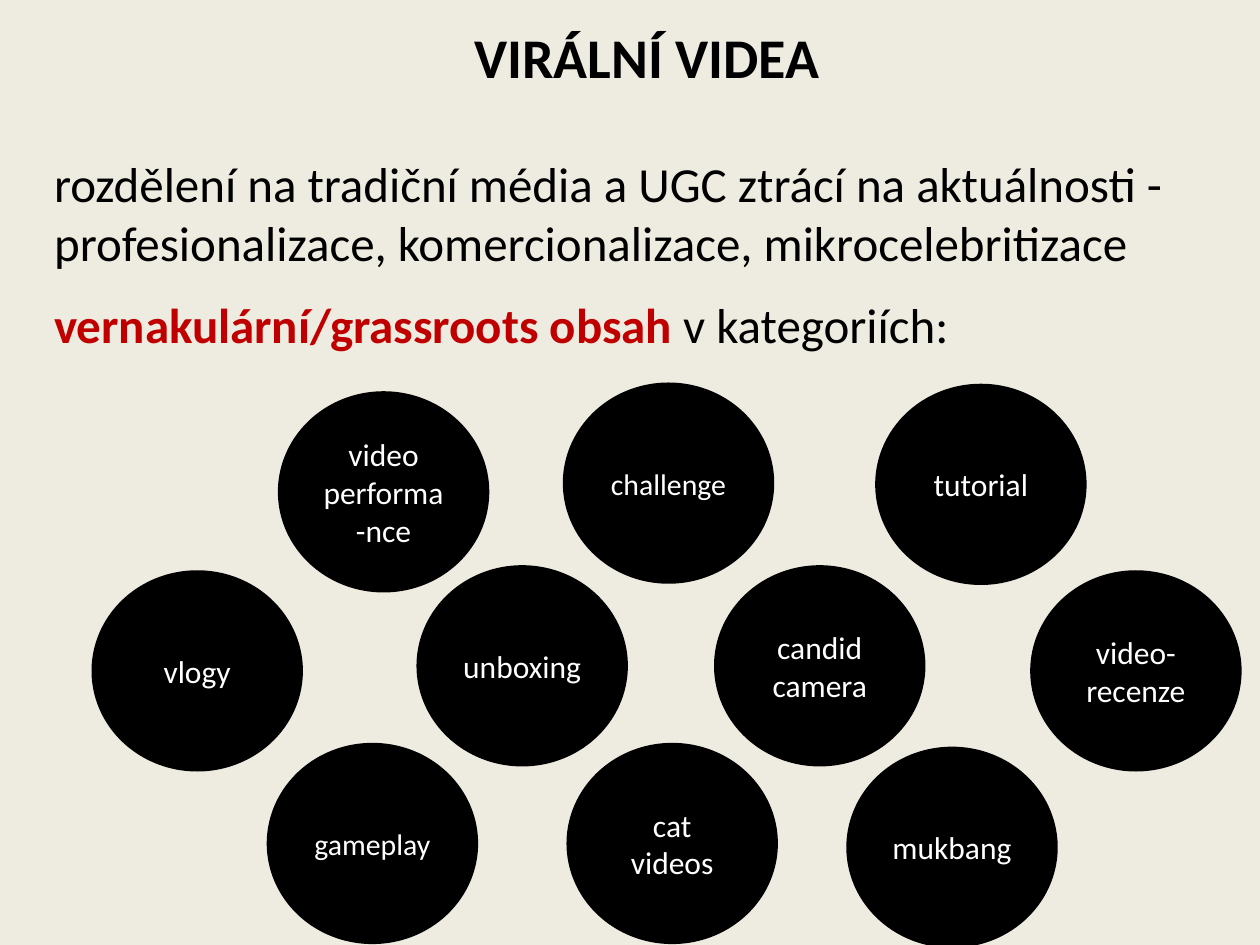
from pptx import Presentation
from pptx.dml.color import RGBColor
from pptx.enum.shapes import MSO_SHAPE as Shape
from pptx.enum.text import MSO_ANCHOR as Anchor, PP_ALIGN as Align
from pptx.util import Pt

FONT = "Calibri"
BLACK, WHITE, RED, CREAM = "000000", "FFFFFF", "C00000", "EEECE1"

# (alignment, size, space before, [(text, colour, bold), ...])
PARAGRAPHS = [
    (Align.CENTER, 32, 0, [("VIRÁLNÍ VIDEA", BLACK, True)]),
    (Align.LEFT, 28, 36.6, [
        ("rozdělení na tradiční média a UGC ztrácí na aktuálnosti - "
         "profesionalizace, komercionalizace, mikrocelebritizace", BLACK, False)]),
    (Align.LEFT, 28, 12.8, [
        ("vernakulární/grassroots obsah ", RED, True),
        ("v kategoriích:", BLACK, False)]),
]

CIRCLE_WIDTH, CIRCLE_HEIGHT = 118.8, 113
# (text, left, top, size), scattered by hand, from back to front
CATEGORIES = [
    ("vlogy", 53.3, 326.9, 18),
    ("cat videos", 324.7, 425.5, 18),
    ("video-recenze", 589.7, 326.9, 18),
    ("video performa-nce", 159.8, 224.6, 18),
    ("unboxing", 239, 324, 18),
    ("gameplay", 153.4, 425.5, 17),
    ("challenge", 322.6, 219.6, 17),
    ("tutorial", 501.1, 220.3, 18),
    ("mukbang", 484.6, 427.7, 18),
    ("candid\ncamera", 409, 324, 18),
]


def rgb(value):
    return RGBColor.from_string(value)


def style(font, size, color, bold=False):
    font.name, font.size, font.bold = FONT, Pt(size), bold
    font.color.rgb = rgb(color)


def add_intro(slide):
    frame = slide.shapes.add_textbox(Pt(23.8), Pt(9.4), Pt(691.9), Pt(586.8)).text_frame
    frame.word_wrap = True
    for index, (align, size, before, runs) in enumerate(PARAGRAPHS):
        paragraph = frame.add_paragraph() if index else frame.paragraphs[0]
        paragraph.alignment = align
        if before:
            paragraph.space_before = Pt(before)
        for text, color, bold in runs:
            run = paragraph.add_run()
            run.text = text
            style(run.font, size, color, bold)


def add_category(slide, text, left, top, size):
    circle = slide.shapes.add_shape(
        Shape.OVAL, Pt(left), Pt(top), Pt(CIRCLE_WIDTH), Pt(CIRCLE_HEIGHT))
    circle.shadow.inherit = False
    circle.fill.solid()
    circle.fill.fore_color.rgb = rgb(BLACK)
    circle.line.color.rgb = rgb(BLACK)
    circle.line.width = Pt(2)
    frame = circle.text_frame
    frame.text = text
    frame.word_wrap = True
    frame.vertical_anchor = Anchor.MIDDLE
    for paragraph in frame.paragraphs:
        paragraph.alignment = Align.CENTER
        for run in paragraph.runs:
            style(run.font, size, WHITE)


def main():
    deck = Presentation()
    deck.slide_width, deck.slide_height = Pt(720), Pt(540)
    slide = deck.slides.add_slide(deck.slide_layouts[6])
    slide.background.fill.solid()
    slide.background.fill.fore_color.rgb = rgb(CREAM)
    add_intro(slide)
    for category in CATEGORIES:
        add_category(slide, *category)
    deck.save("out.pptx")


if __name__ == "__main__":
    main()
